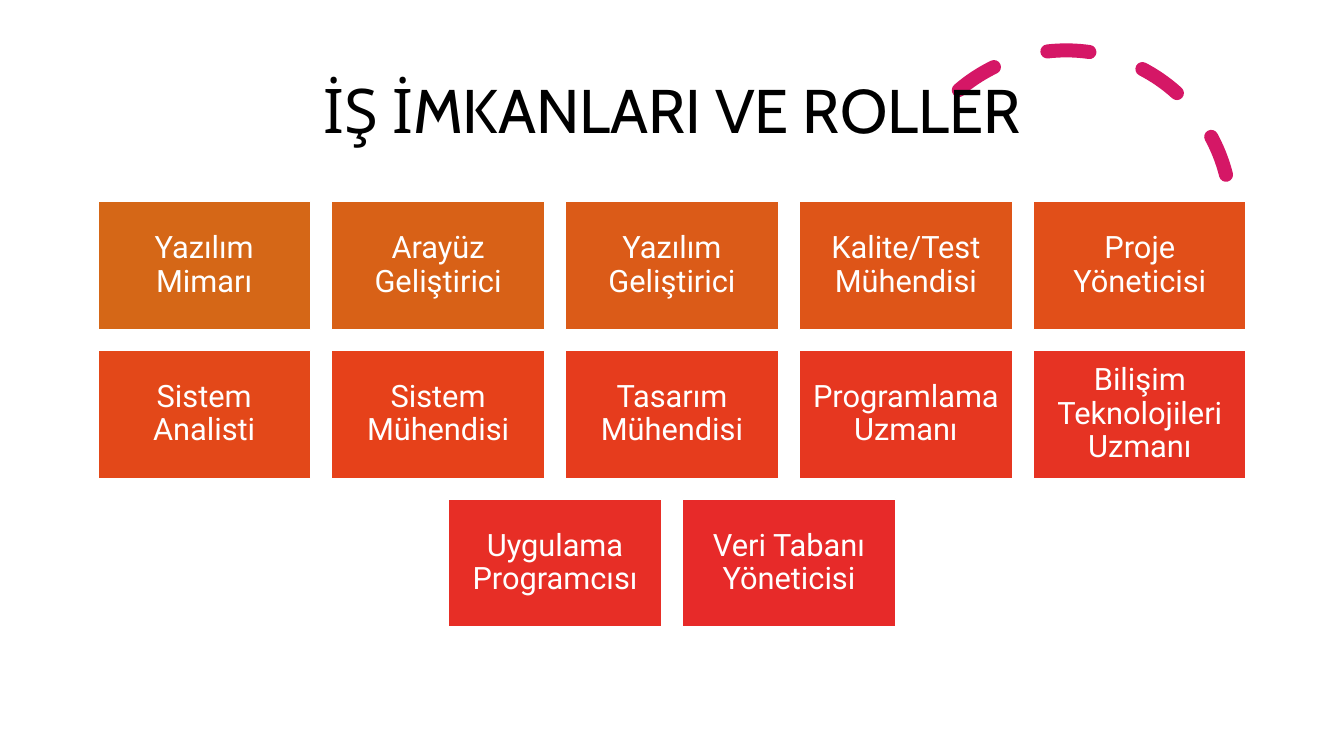
from dataclasses import dataclass

from pptx import Presentation
from pptx.dml.color import RGBColor
from pptx.enum.dml import MSO_LINE
from pptx.enum.shapes import MSO_SHAPE
from pptx.enum.text import MSO_ANCHOR, PP_ALIGN
from pptx.slide import Slide
from pptx.text.text import TextFrame
from pptx.util import Inches, Pt

RECTANGLE = MSO_SHAPE.RECTANGLE
ARC = MSO_SHAPE.ARC
DASH = MSO_LINE.DASH
MIDDLE = MSO_ANCHOR.MIDDLE
CENTER = PP_ALIGN.CENTER

WHITE = RGBColor(0xFF, 0xFF, 0xFF)
BLACK = RGBColor(0x00, 0x00, 0x00)
PINK = RGBColor(0xD5, 0x17, 0x66)

# Card grid, in inches
SLIDE_WIDTH, SLIDE_HEIGHT = 13.33, 7.5
CARD_WIDTH, CARD_HEIGHT = 2.11, 1.27
COLUMN_STEP, ROW_STEP = 2.32, 1.475
GRID_TOP = 2.0
CARDS_PER_ROW = 5
CARD_INSET = 0.09


@dataclass(frozen=True)
class Role:
    name: str
    color: RGBColor


ROLES = [
    Role("Yazılım Mimarı", RGBColor(0xD5, 0x67, 0x17)),
    Role("Arayüz Geliştirici", RGBColor(0xD8, 0x61, 0x17)),
    Role("Yazılım Geliştirici", RGBColor(0xDB, 0x5B, 0x18)),
    Role("Kalite/Test Mühendisi", RGBColor(0xDE, 0x55, 0x18)),
    Role("Proje Yöneticisi", RGBColor(0xE1, 0x4F, 0x19)),
    Role("Sistem Analisti", RGBColor(0xE3, 0x48, 0x19)),
    Role("Sistem Mühendisi", RGBColor(0xE6, 0x41, 0x1A)),
    Role("Tasarım Mühendisi", RGBColor(0xE6, 0x3C, 0x1D)),
    Role("Programlama Uzmanı", RGBColor(0xE6, 0x37, 0x20)),
    Role("Bilişim Teknolojileri Uzmanı", RGBColor(0xE6, 0x33, 0x23)),
    Role("Uygulama Programcısı", RGBColor(0xE7, 0x2E, 0x26)),
    Role("Veri Tabanı Yöneticisi", RGBColor(0xE7, 0x2A, 0x29)),
]


def write_centered(frame: TextFrame, text: str, font: str, size: float,
                   color: RGBColor) -> None:
    frame.word_wrap = True
    frame.vertical_anchor = MIDDLE
    paragraph = frame.paragraphs[0]
    paragraph.alignment = CENTER
    paragraph.line_spacing = 0.9
    run = paragraph.add_run()
    run.text = text
    run.font.name = font
    run.font.size = Pt(size)
    run.font.color.rgb = color


def add_dashed_arc(slide: Slide) -> None:
    arc = slide.shapes.add_shape(ARC, Inches(8.94), Inches(0.5),
                                 Inches(3.27), Inches(3.27))
    arc.shadow.inherit = False
    arc.rotation = 345.8
    arc.adjustments[0] = 146.13
    arc.adjustments[1] = 0
    arc.fill.background()
    arc.line.color.rgb = PINK
    arc.line.width = Pt(10)
    arc.line.dash_style = DASH
    # Rounded dash ends
    arc.line._get_or_add_ln().set("cap", "rnd")


def add_title(slide: Slide) -> None:
    title = slide.shapes.add_textbox(Inches(0.92), Inches(0.4),
                                     Inches(11.5), Inches(1.45))
    write_centered(title.text_frame, "İŞ İMKANLARI VE ROLLER", "Cabin", 44, BLACK)


def add_role_card(slide: Slide, role: Role, left: float, top: float) -> None:
    card = slide.shapes.add_shape(RECTANGLE, Inches(left), Inches(top),
                                  Inches(CARD_WIDTH), Inches(CARD_HEIGHT))
    card.shadow.inherit = False
    card.fill.solid()
    card.fill.fore_color.rgb = role.color
    card.line.color.rgb = WHITE
    card.line.width = Pt(1)
    frame = card.text_frame
    frame.margin_left = frame.margin_right = Inches(CARD_INSET)
    frame.margin_top = frame.margin_bottom = Inches(CARD_INSET)
    write_centered(frame, role.name, "Roboto", 22, WHITE)


def add_role_grid(slide: Slide) -> None:
    for row, first in enumerate(range(0, len(ROLES), CARDS_PER_ROW)):
        row_roles = ROLES[first:first + CARDS_PER_ROW]
        # Each row is centred on the slide
        row_width = (len(row_roles) - 1) * COLUMN_STEP + CARD_WIDTH
        row_left = (SLIDE_WIDTH - row_width) / 2
        for column, role in enumerate(row_roles):
            add_role_card(slide, role, row_left + column * COLUMN_STEP,
                          GRID_TOP + row * ROW_STEP)


def main() -> None:
    presentation = Presentation()
    presentation.slide_width = Inches(SLIDE_WIDTH)
    presentation.slide_height = Inches(SLIDE_HEIGHT)
    slide = presentation.slides.add_slide(presentation.slide_layouts[6])
    slide.background.fill.solid()
    slide.background.fill.fore_color.rgb = WHITE
    add_dashed_arc(slide)
    add_title(slide)
    add_role_grid(slide)
    presentation.save("out.pptx")


if __name__ == "__main__":
    main()
